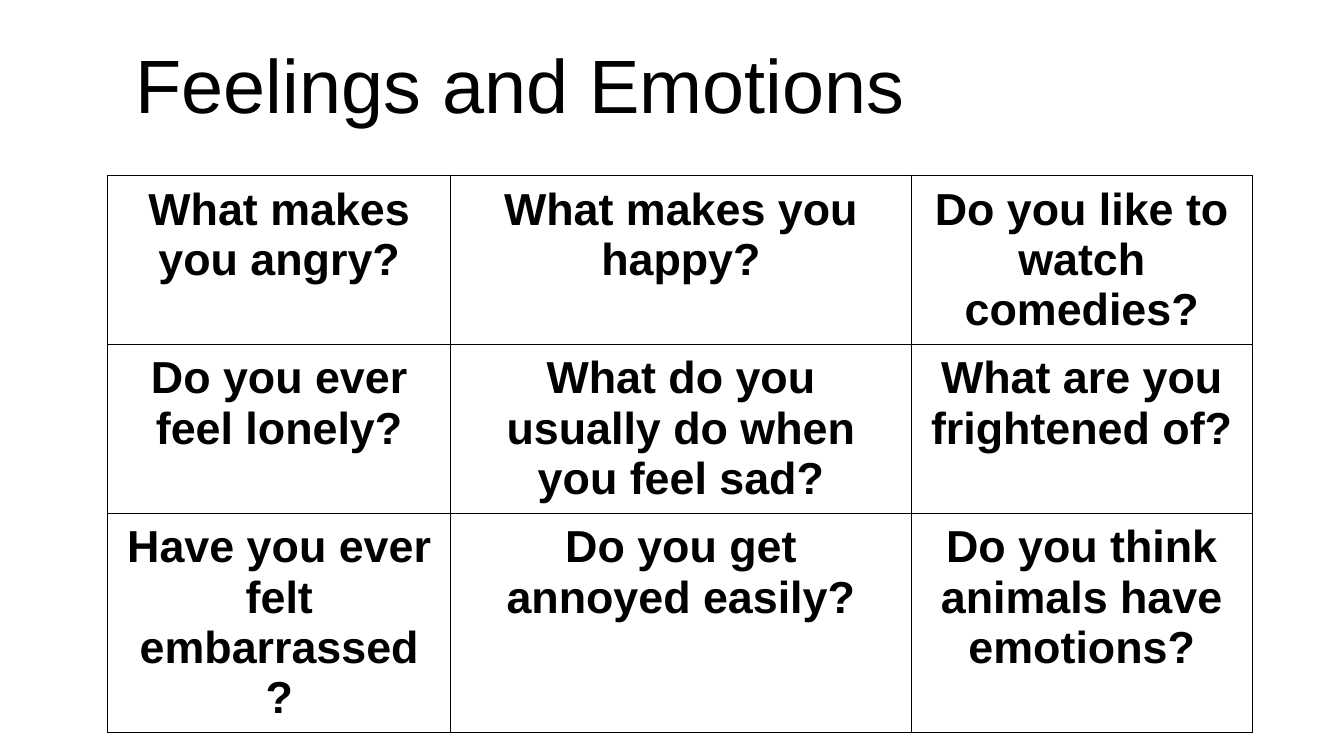
from dataclasses import dataclass

from lxml import etree
from pptx import Presentation
from pptx.dml.color import RGBColor
from pptx.enum.text import MSO_ANCHOR, MSO_AUTO_SIZE, PP_ALIGN
from pptx.oxml.ns import qn
from pptx.util import Pt

PX = 9144  # EMU per px, 100 px to the inch
CENTER = PP_ALIGN.CENTER
BOTTOM = MSO_ANCHOR.BOTTOM
NO_AUTOFIT = MSO_AUTO_SIZE.NONE
TITLE_ONLY = 5


@dataclass(frozen=True)
class Theme:
    font: str = "Arial"
    ink: str = "000000"
    paper: str = "FFFFFF"
    title_size: int = 54
    cell_size: int = 32
    border: int = 1


THEME = Theme()
COLUMNS = [340, 457, 338]
ROWS = [166, 166, 157]
QUESTIONS = [
    ["What makes you angry?", "What makes you happy?",
     "Do you like to watch comedies?"],
    ["Do you ever feel lonely?", "What do you usually do when you feel sad?",
     "What are you frightened of?"],
    ["Have you ever felt embarrassed?", "Do you get annoyed easily?",
     "Do you think animals have emotions?"],
]


def set_attrs(target, values):
    for name, value in values.items():
        setattr(target, name, value)


def write(tf, text, size, bold):
    """Fill a text frame with one centred paragraph."""
    p = tf.paragraphs[0]
    p.alignment = CENTER
    r = p.add_run()
    r.text = text
    set_attrs(r.font, {"name": THEME.font, "size": Pt(size), "bold": bold})
    r.font.color.rgb = RGBColor.from_string(THEME.ink)
    return p


def add_borders(cell):
    """Draw a solid line on all four sides of a cell."""
    tc_pr = cell._tc.get_or_add_tcPr()
    for i, side in enumerate(("a:lnL", "a:lnR", "a:lnT", "a:lnB")):
        ln = etree.Element(qn(side), w=str(Pt(THEME.border)))
        fill = etree.SubElement(ln, qn("a:solidFill"))
        etree.SubElement(fill, qn("a:srgbClr"), val=THEME.ink)
        tc_pr.insert(i, ln)


def place_title(s, text, left, top, width, height):
    title = s.shapes.title
    set_attrs(title, {"left": left * PX, "top": top * PX,
                      "width": width * PX, "height": height * PX})
    tf = title.text_frame
    set_attrs(tf, {"word_wrap": True, "auto_size": NO_AUTOFIT,
                   "vertical_anchor": BOTTOM})
    write(tf, text, THEME.title_size, False).line_spacing = 0.9


def add_question_grid(s, left, top):
    frame = s.shapes.add_table(len(ROWS), len(COLUMNS), left * PX, top * PX,
                               sum(COLUMNS) * PX, sum(ROWS) * PX)
    table = frame.table
    set_attrs(table, {"first_row": False, "horz_banding": False})
    for column, width in zip(table.columns, COLUMNS):
        column.width = width * PX
    for row, height, questions in zip(table.rows, ROWS, QUESTIONS):
        row.height = height * PX
        for cell, question in zip(row.cells, questions):
            set_attrs(cell, {"margin_left": 18 * PX, "margin_right": 18 * PX,
                             "margin_top": 9 * PX, "margin_bottom": 9 * PX})
            cell.fill.solid()
            cell.fill.fore_color.rgb = RGBColor.from_string(THEME.paper)
            add_borders(cell)
            write(cell.text_frame, question, THEME.cell_size, True)


def main():
    prs = Presentation()
    set_attrs(prs, {"slide_width": 1333 * PX, "slide_height": 750 * PX})
    s = prs.slides.add_slide(prs.slide_layouts[TITLE_ONLY])
    place_title(s, "Feelings and Emotions", 92, 32, 848, 102)
    add_question_grid(s, 107, 174)
    prs.save("out.pptx")


if __name__ == "__main__":
    main()
